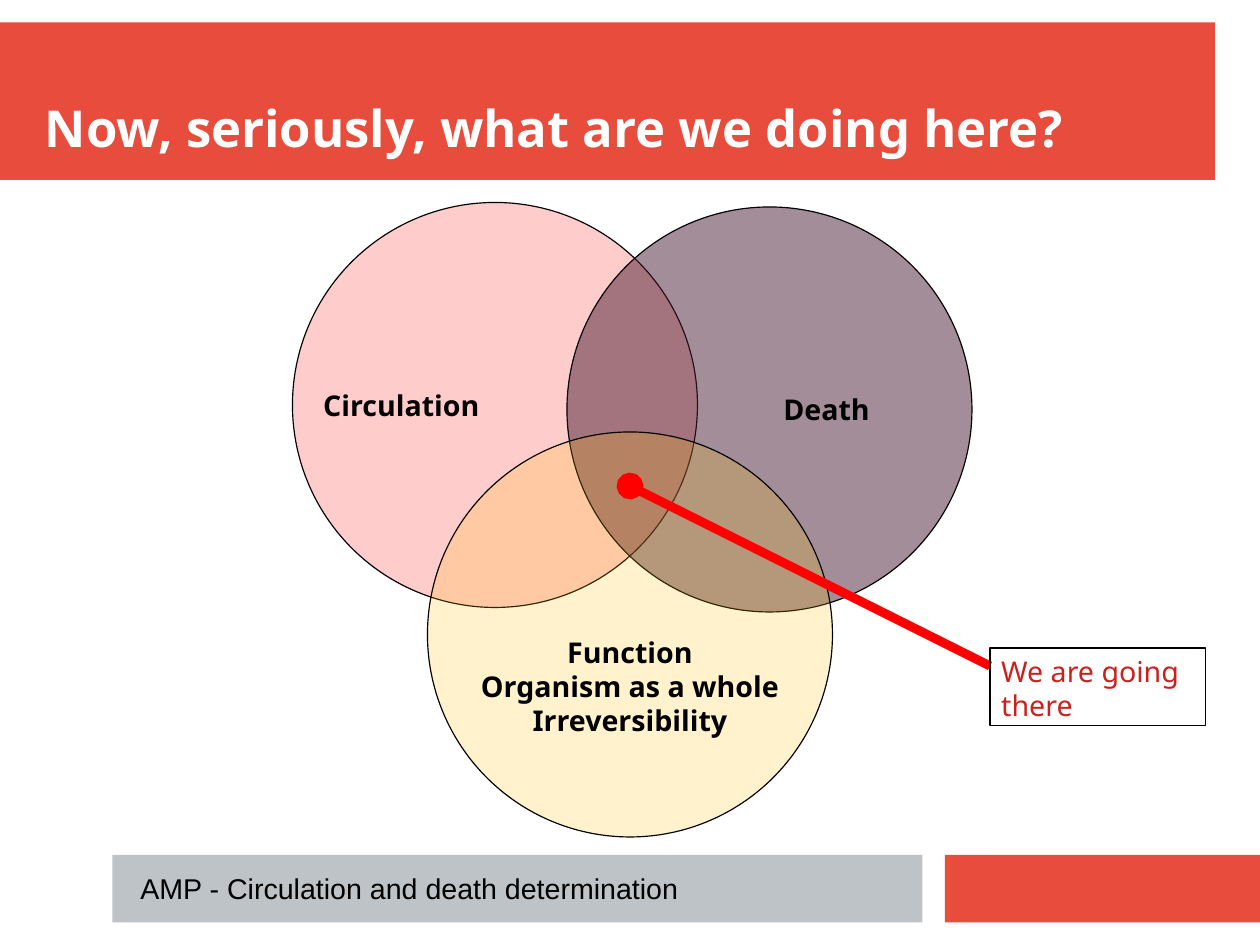
from lxml.etree import SubElement
from pptx import Presentation
from pptx.dml.color import RGBColor
from pptx.enum.shapes import MSO_CONNECTOR, MSO_SHAPE
from pptx.enum.text import MSO_ANCHOR, MSO_AUTO_SIZE, PP_ALIGN
from pptx.oxml.ns import qn
from pptx.util import Cm, Pt

CORAL = RGBColor(0xE7, 0x4C, 0x3C)
SILVER = RGBColor(0xBD, 0xC3, 0xC7)
WHITE = RGBColor(0xFF, 0xFF, 0xFF)
BLACK = RGBColor(0, 0, 0)
RED = RGBColor(0xFF, 0, 0)
PLUM = RGBColor(0x48, 0x1D, 0x32)
AMBER = RGBColor(0xFF, 0xBF, 0)
DARK_RED = RGBColor(0xC9, 0x21, 0x1E)

DIAMETER = 9
INSET_X, INSET_Y = 0.25, 0.13


class VennSlide:
    """Holds the text style and the slide being built."""

    font = {"name": "Noto Sans", "size": Pt(18), "bold": False}

    def __init__(self, deck):
        self.slide = deck.slides.add_slide(deck.slide_layouts[5])
        self.shapes = self.slide.shapes

    def set_text(self, frame, lines, color, align=PP_ALIGN.LEFT, **changes):
        frame.text = "\n".join(lines)
        for paragraph in frame.paragraphs:
            paragraph.alignment = align
            font = paragraph.runs[0].font
            for attribute, value in {**self.font, **changes}.items():
                setattr(font, attribute, value)
            font.color.rgb = color

    def layout_text(self, frame, left, top, right, bottom, **settings):
        margins = {"margin_left": left, "margin_top": top,
                   "margin_right": right, "margin_bottom": bottom}
        for attribute, value in margins.items():
            setattr(frame, attribute, Cm(value))
        for attribute, value in settings.items():
            setattr(frame, attribute, value)

    def outlined(self, kind, left, top, width, height):
        shape = self.shapes.add_shape(kind, Cm(left), Cm(top), Cm(width), Cm(height))
        shape.shadow.inherit = False
        shape.line.color.rgb = BLACK
        shape.line.width = Pt(0)
        return shape

    def band(self, left, top, width, height, color):
        band = self.outlined(MSO_SHAPE.RECTANGLE, left, top, width, height)
        band.fill.solid()
        band.fill.fore_color.rgb = color
        band.line.fill.background()

    def title(self, text):
        title = self.shapes.title
        place = {"left": 1, "top": 1, "width": 26, "height": 2.5}
        for attribute, value in place.items():
            setattr(title, attribute, Cm(value))
        self.layout_text(title.text_frame, 0, 0, 0, 0, word_wrap=True,
                         auto_size=MSO_AUTO_SIZE.NONE,
                         vertical_anchor=MSO_ANCHOR.BOTTOM)
        self.set_text(title.text_frame, [text], WHITE, size=Pt(32), bold=True)
        # The title has to lie in front of its band
        title.element.getparent().append(title.element)

    def circle(self, left, top, color, opacity, lines, shift_x=0, shift_y=0):
        """Add a see-through circle; the shifts move its label off centre."""
        circle = self.outlined(MSO_SHAPE.OVAL, left, top, DIAMETER, DIAMETER)
        circle.fill.solid()
        circle.fill.fore_color.rgb = color
        tint = circle.element.spPr.find(qn("a:solidFill"))[0]
        SubElement(tint, qn("a:alpha"), val=str(opacity * 1000))
        self.layout_text(circle.text_frame,
                         INSET_X + max(0, 2 * shift_x), INSET_Y + 2 * shift_y,
                         INSET_X + max(0, -2 * shift_x), INSET_Y,
                         word_wrap=False, vertical_anchor=MSO_ANCHOR.MIDDLE)
        self.set_text(circle.text_frame, lines, BLACK, PP_ALIGN.CENTER, bold=True)

    def pointer(self, start, end):
        pointer = self.shapes.add_connector(
            MSO_CONNECTOR.STRAIGHT, *map(Cm, start), *map(Cm, end))
        pointer.line.color.rgb = RED
        pointer.line.width = Pt(5.67)
        outline = pointer.element.spPr.find(qn("a:ln"))
        SubElement(outline, qn("a:headEnd"), type="oval")
        SubElement(pointer.element.spPr, qn("a:effectLst"))

    def callout(self, left, top, width, height, text):
        callout = self.outlined(MSO_SHAPE.RECTANGLE, left, top, width, height)
        callout.fill.background()
        self.layout_text(callout.text_frame, INSET_X, INSET_Y, INSET_X, INSET_Y,
                         word_wrap=True, vertical_anchor=MSO_ANCHOR.TOP)
        self.set_text(callout.text_frame, [text], DARK_RED)

    def footer(self, left, top, width, height, text):
        footer = self.shapes.add_textbox(Cm(left), Cm(top), Cm(width), Cm(height))
        footer.text_frame.word_wrap = True
        self.set_text(footer.text_frame, [text], BLACK, name="Arial")


def main():
    deck = Presentation()
    deck.slide_width, deck.slide_height = Cm(28), Cm(21)
    venn = VennSlide(deck)

    venn.band(0, 0.5, 27, 3.5, CORAL)
    venn.band(21, 19, 7, 1.5, CORAL)
    venn.band(2.5, 19, 18, 1.5, SILVER)
    venn.title("Now, seriously, what are we doing here?")

    venn.circle(6.5, 4.5, RED, 20, ["Circulation"], shift_x=-2.08)
    venn.circle(12.6, 4.6, PLUM, 50, ["Death"], shift_x=1.27)
    venn.circle(9.5, 9.6, AMBER, 20,
                ["Function", "Organism as a whole", "Irreversibility"], shift_y=1.15)

    venn.pointer((14, 10.8), (22, 14.8))
    venn.callout(22, 14.4, 4.8, 1.73, "We are going there")
    venn.footer(2.87, 19.23, 17, 1.02, "AMP - Circulation and death determination")
    deck.save("out.pptx")


if __name__ == "__main__":
    main()
